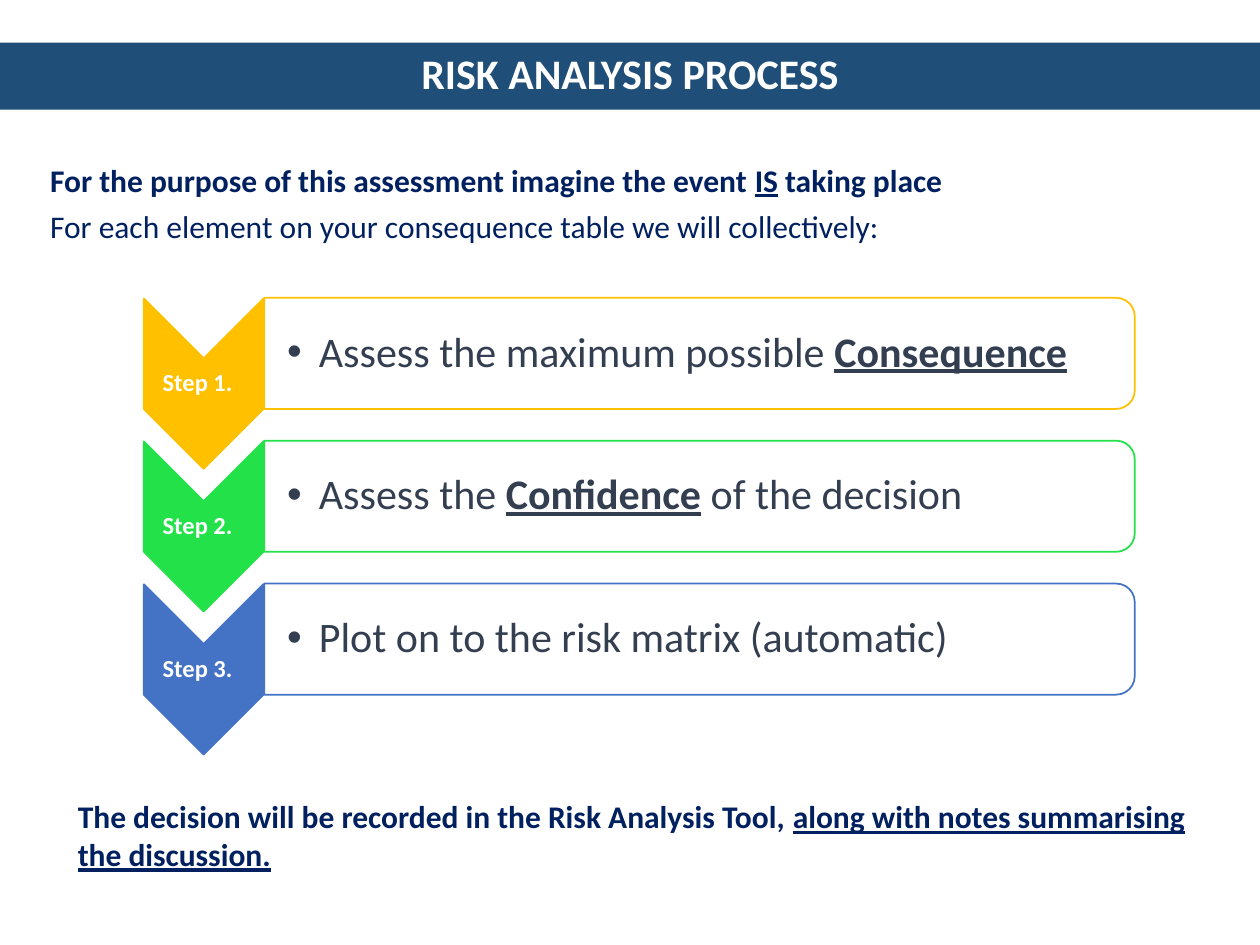
from typing import NamedTuple

from lxml.etree import SubElement
from pptx import Presentation
from pptx.dml.color import RGBColor
from pptx.enum.shapes import MSO_SHAPE as Shape
from pptx.enum.text import MSO_ANCHOR as Anchor, MSO_AUTO_SIZE as Fit, PP_ALIGN as Align
from pptx.oxml.ns import qn
from pptx.util import Cm, Pt

WHITE = RGBColor(0xFF, 0xFF, 0xFF)
BLUE = RGBColor(0x1F, 0x4E, 0x79)
NAVY = RGBColor(0x00, 0x20, 0x60)
SLATE = RGBColor(0x33, 0x3F, 0x50)
AMBER = RGBColor(0xFF, 0xC0, 0x00)
GREEN = RGBColor(0x23, 0xE1, 0x48)
AZURE = RGBColor(0x44, 0x72, 0xC4)

PITCH = 2.88  # distance between steps, in cm


class Run(NamedTuple):
    text: str
    bold: bool = False
    line: bool = False


class Box(NamedTuple):
    left: float
    top: float
    width: float
    height: float

    def down(self, gap: float) -> "Box":
        return self._replace(top=self.top + gap)

    def cm(self) -> list:
        return [Cm(side) for side in self]


class Step(NamedTuple):
    color: RGBColor
    runs: list


ARROW = Box(2.39, 6.53, 3.43, 2.41)
LABEL = Box(2.9, 7.21, 2.41, 1.04)
PANEL = Box(12.98, -1.65, 2.24, 17.55)
TASK = Box(5.31, 6.12, 17.45, 2.01)

STEPS = [
    Step(AMBER, [Run("Assess the maximum possible "), Run("Consequence", True, True)]),
    Step(GREEN, [Run("Assess the "), Run("Confidence", True, True),
                 Run(" of the decision")]),
    Step(AZURE, [Run("Plot on to the risk matrix (automatic)")]),
]
INTRO = [
    [Run("For the purpose of this assessment imagine the event ", True),
     Run("IS", True, True), Run(" taking place", True)],
    [Run("For each element on your consequence table we will collectively:")],
]
CLOSE = [
    [Run("The decision will be recorded in the Risk Analysis Tool, ", True),
     Run("along with notes summarising the discussion.", True, True)],
]


def write(para, runs: list, size: float, color: RGBColor) -> None:
    font = para.font
    font.name, font.size = "Calibri", Pt(size)
    font.color.rgb = color
    for item in runs:
        run = para.add_run()
        run.text = item.text
        run.font.bold, run.font.underline = item.bold, item.line


def add_frame(slide, box: Box):
    frame = slide.shapes.add_textbox(*box.cm()).text_frame
    frame.word_wrap = True
    return frame


def add_inner(slide, box: Box, left: float, right: float, edge: float):
    """Text frame centred vertically, with tight margins."""
    frame = add_frame(slide, box)
    frame.vertical_anchor = Anchor.MIDDLE
    frame.margin_left, frame.margin_right = Cm(left), Cm(right)
    frame.margin_top = frame.margin_bottom = Cm(edge)
    para = frame.paragraphs[0]
    para.line_spacing = 0.9
    return para


def add_note(slide, box: Box, paras: list) -> None:
    frame = add_frame(slide, box)
    frame.auto_size = Fit.SHAPE_TO_FIT_TEXT
    for i, runs in enumerate(paras):
        para = frame.add_paragraph() if i else frame.paragraphs[0]
        para.space_after = Pt(4.5)
        write(para, runs, 18, NAVY)


def add_turned(slide, kind, box: Box, fill: RGBColor, line: RGBColor):
    shape = slide.shapes.add_shape(kind, *box.cm())
    shape.rotation = 90
    shape.shadow.inherit = False
    shape.fill.solid()
    shape.fill.fore_color.rgb = fill
    shape.line.color.rgb = line
    shape.line.width = Pt(1)
    return shape


def add_bullet(para) -> None:
    props = para._p.get_or_add_pPr()
    props.set("marL", str(Cm(0.64)))
    props.set("indent", str(-Cm(0.64)))
    SubElement(props, qn("a:buFont"), typeface="Arial")
    SubElement(props, qn("a:buChar"), char="•")


def add_step(slide, index: int, step: Step) -> None:
    gap = index * PITCH
    add_turned(slide, Shape.CHEVRON, ARROW.down(gap), step.color, step.color)
    para = add_inner(slide, LABEL.down(gap), 0.03, 0.27, 0.03)
    para.alignment = Align.CENTER
    write(para, [Run(f"Step {index + 1}.", True)], 14, WHITE)

    panel = add_turned(slide, Shape.ROUND_2_SAME_RECTANGLE, PANEL.down(gap),
                       WHITE, step.color)
    tint = panel._element.spPr.find(qn("a:solidFill"))[0]
    SubElement(tint, qn("a:alpha"), val="90000")
    para = add_inner(slide, TASK.down(gap), 0.48, 0.05, 0.05)
    add_bullet(para)
    write(para, step.runs, 24, SLATE)


def main() -> None:
    deck = Presentation()
    deck.slide_width, deck.slide_height = Cm(25.4), Cm(19.05)
    slide = deck.slides.add_slide(deck.slide_layouts[5])

    # Title band
    title = slide.shapes.title
    title.left, title.top, title.width, title.height = Box(0, 0.86, 25.4, 1.35).cm()
    title.fill.solid()
    title.fill.fore_color.rgb = BLUE
    title.text_frame.vertical_anchor = Anchor.MIDDLE
    title.text_frame.auto_size = Fit.NONE
    head = title.text_frame.paragraphs[0]
    head.alignment = Align.CENTER
    head.line_spacing = 0.9
    write(head, [Run("RISK ANALYSIS PROCESS", True)], 24, WHITE)

    # Steps
    for i, step in enumerate(STEPS):
        add_step(slide, i, step)

    # Text above and below the steps
    add_note(slide, Box(0.76, 3.12, 23.95, 1.98), INTRO)
    add_note(slide, Box(1.32, 15.95, 23.37, 1.8), CLOSE)

    deck.save("out.pptx")


if __name__ == "__main__":
    main()
